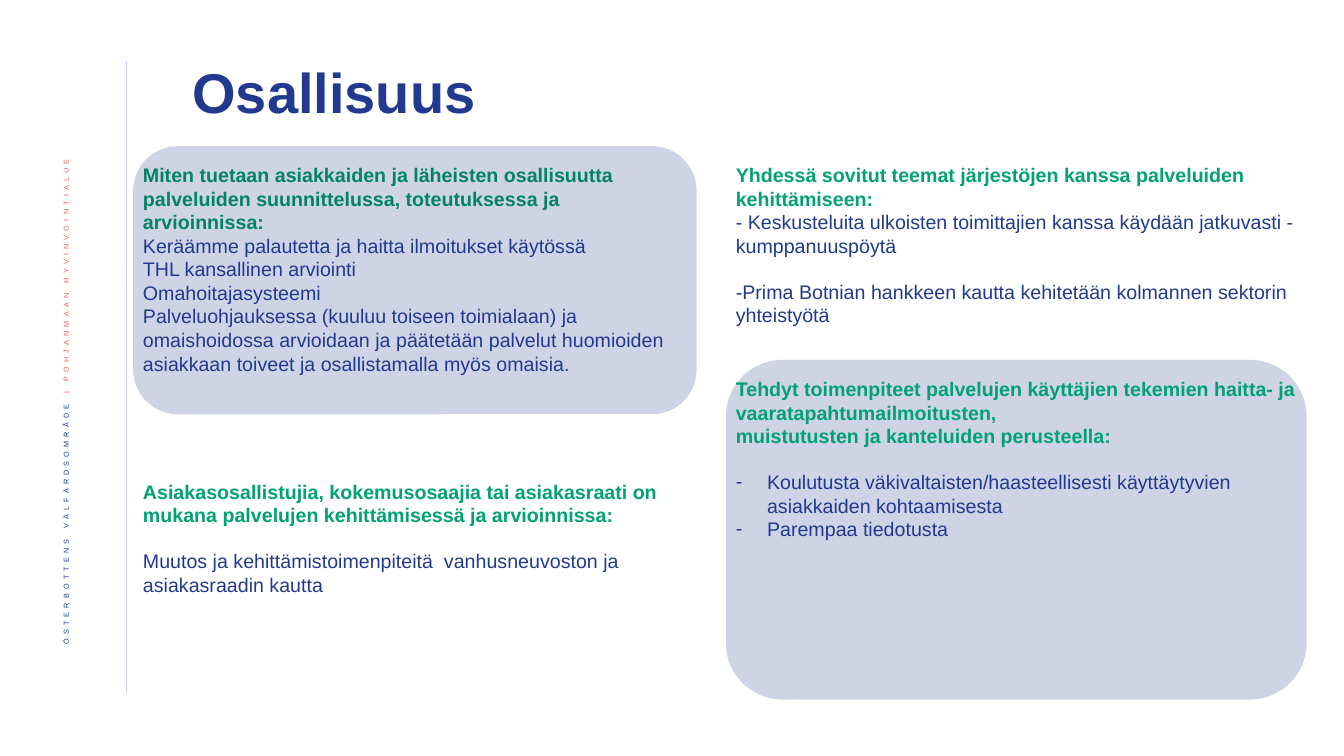
from dataclasses import dataclass
from typing import Optional

from lxml.etree import SubElement
from pptx import Presentation
from pptx.dml.color import RGBColor
from pptx.enum.shapes import MSO_CONNECTOR, MSO_SHAPE
from pptx.enum.text import MSO_ANCHOR, PP_ALIGN
from pptx.oxml.ns import qn
from pptx.util import Emu, Inches, Pt

COLORS = {"navy": "213A8F", "green": "00A174", "dark green": "008464",
          "coral": "EB5C5F", "pale blue": "C9D2F2"}
FONT = "Arial"
BODY_SIZE = 14
BLANK_LAYOUT = 6
BODY_LINE = 16.1  # points, one line of body text
PANEL_PADDING = 1.6  # rows between a panel's top and its text
INDENT = Inches(0.31)

deck = Presentation()
deck.slide_width, deck.slide_height = Inches(13.33), Inches(7.5)
page = deck.slides.add_slide(deck.slide_layouts[BLANK_LAYOUT])


@dataclass(frozen=True)
class Area:
    """A place on a grid of 100 columns and 100 rows."""
    column: float
    row: float
    columns: float
    rows: float

    def emu(self) -> tuple[Emu, Emu, Emu, Emu]:
        wide, high = deck.slide_width / 100, deck.slide_height / 100
        return (Emu(round(self.column * wide)), Emu(round(self.row * high)),
                Emu(round(self.columns * wide)), Emu(round(self.rows * high)))


@dataclass(frozen=True)
class Line:
    text: str
    gap: bool = False
    bullet: bool = False


@dataclass(frozen=True)
class Section:
    area: Area
    headings: list[str]
    lines: list[Line]
    color: str = "green"
    panel_rows: Optional[float] = None


def add_span(para, text: str, *, size: float = BODY_SIZE, color: str = "navy",
             bold: bool = False, raised: int = 0, spacing: int = 0) -> None:
    span = para.add_run()
    span.text = text
    font = span.font
    font.name, font.size, font.bold = FONT, Pt(size), bold
    font.color.rgb = RGBColor.from_string(COLORS[color])
    properties = span._r.get_or_add_rPr()
    if raised:
        properties.set("baseline", str(raised * 1000))
    if spacing:
        properties.set("spc", str(spacing * 100))


def add_box(area: Area, anchor: MSO_ANCHOR = MSO_ANCHOR.TOP):
    frame = page.shapes.add_textbox(*area.emu()).text_frame
    frame.word_wrap = True
    frame.vertical_anchor = anchor
    return frame


def add_bullet(para) -> None:
    properties = para._p.get_or_add_pPr()
    properties.set("marL", str(INDENT))
    properties.set("indent", str(-INDENT))
    SubElement(properties, qn("a:buFont")).set("typeface", FONT)
    SubElement(properties, qn("a:buChar")).set("char", "-")


def add_panel(area: Area) -> None:
    panel = page.shapes.add_shape(MSO_SHAPE.ROUNDED_RECTANGLE, *area.emu())
    panel.shadow.inherit = False
    panel.line.fill.background()
    panel.fill.solid()
    panel.fill.fore_color.rgb = RGBColor.from_string(COLORS["navy"])
    tint = panel._element.spPr.find(qn("a:solidFill"))[0]
    SubElement(tint, qn("a:alpha")).set("val", "22000")


def add_section(section: Section) -> None:
    area = section.area
    if section.panel_rows:
        add_panel(Area(area.column, area.row - PANEL_PADDING,
                       area.columns, section.panel_rows))
    frame = add_box(area)
    for number, heading in enumerate(section.headings):
        para = frame.add_paragraph() if number else frame.paragraphs[0]
        add_span(para, heading, color=section.color, bold=True)
    for line in section.lines:
        para = frame.add_paragraph()
        if line.gap:
            para.space_before = Pt(BODY_LINE)
        if line.bullet:
            add_bullet(para)
        add_span(para, line.text)


# Vertical rule
left, top, _, height = Area(9.38, 8.13, 0, 83.6).emu()
rule = page.shapes.add_connector(MSO_CONNECTOR.STRAIGHT, left, top, left, top + height)
rule.line.color.rgb = RGBColor.from_string(COLORS["pale blue"])
rule.line.width = Pt(0.5)
SubElement(rule._element.spPr, qn("a:effectLst"))

# Sideways organisation name
side = add_box(Area(3.15, 18.93, 3.9, 76.4), MSO_ANCHOR.MIDDLE)
side._txBody.bodyPr.set("vert", "vert270")
side_para = side.paragraphs[0]
side_para.alignment = PP_ALIGN.RIGHT
side_para.line_spacing = 0.9
for name, name_color in (("ÖSTERBOTTENS VÄLFÄRDSOMRÅDE ", "navy"),
                         ("| POHJANMAAN HYVINVOINTIALUE ", "coral")):
    add_span(side_para, name, size=9, color=name_color, raised=30, spacing=3)

# Title
title_para = add_box(Area(13.58, 6, 74.87, 13.2), MSO_ANCHOR.MIDDLE).paragraphs[0]
title_para.line_spacing = 0.9
add_span(title_para, "Osallisuus", size=40, bold=True)

# Four sections in two columns
LEFT, LEFT_WIDTH = 9.9, 41.94
RIGHT, RIGHT_WIDTH = 54.01, 43.21
SECTIONS = [
    Section(
        Area(LEFT, 20.93, LEFT_WIDTH, 29.6),
        ["Miten tuetaan asiakkaiden ja läheisten osallisuutta palveluiden "
         "suunnittelussa, toteutuksessa ja arvioinnissa:"],
        [Line("Keräämme palautetta ja haitta ilmoitukset käytössä"),
         Line("THL kansallinen arviointi"),
         Line("Omahoitajasysteemi"),
         Line("Palveluohjauksessa (kuuluu toiseen toimialaan) ja omaishoidossa "
              "arvioidaan ja päätetään palvelut huomioiden asiakkaan toiveet ja "
              "osallistamalla myös omaisia.")],
        color="dark green", panel_rows=35.47),
    Section(
        Area(RIGHT, 20.93, RIGHT_WIDTH, 23.33),
        ["Yhdessä sovitut teemat järjestöjen kanssa palveluiden kehittämiseen:"],
        [Line("- Keskusteluita ulkoisten toimittajien kanssa käydään jatkuvasti "
              "- kumppanuuspöytä"),
         Line("-Prima Botnian hankkeen kautta kehitetään kolmannen sektorin "
              "yhteistyötä", gap=True)]),
    Section(
        Area(LEFT, 62.8, LEFT_WIDTH, 20.13),
        ["Asiakasosallistujia, kokemusosaajia tai asiakasraati on mukana "
         "palvelujen kehittämisessä ja arvioinnissa:"],
        [Line("Muutos ja kehittämistoimenpiteitä  vanhusneuvoston ja "
              "asiakasraadin kautta", gap=True)]),
    Section(
        Area(RIGHT, 49.2, RIGHT_WIDTH, 23.33),
        ["Tehdyt toimenpiteet palvelujen käyttäjien tekemien haitta- ja "
         "vaaratapahtumailmoitusten,",
         "muistutusten ja kanteluiden perusteella:"],
        [Line("Koulutusta väkivaltaisten/haasteellisesti käyttäytyvien "
              "asiakkaiden kohtaamisesta", gap=True, bullet=True),
         Line("Parempaa tiedotusta", bullet=True)],
        panel_rows=44.93),
]
for section in SECTIONS:
    add_section(section)

deck.save("out.pptx")
